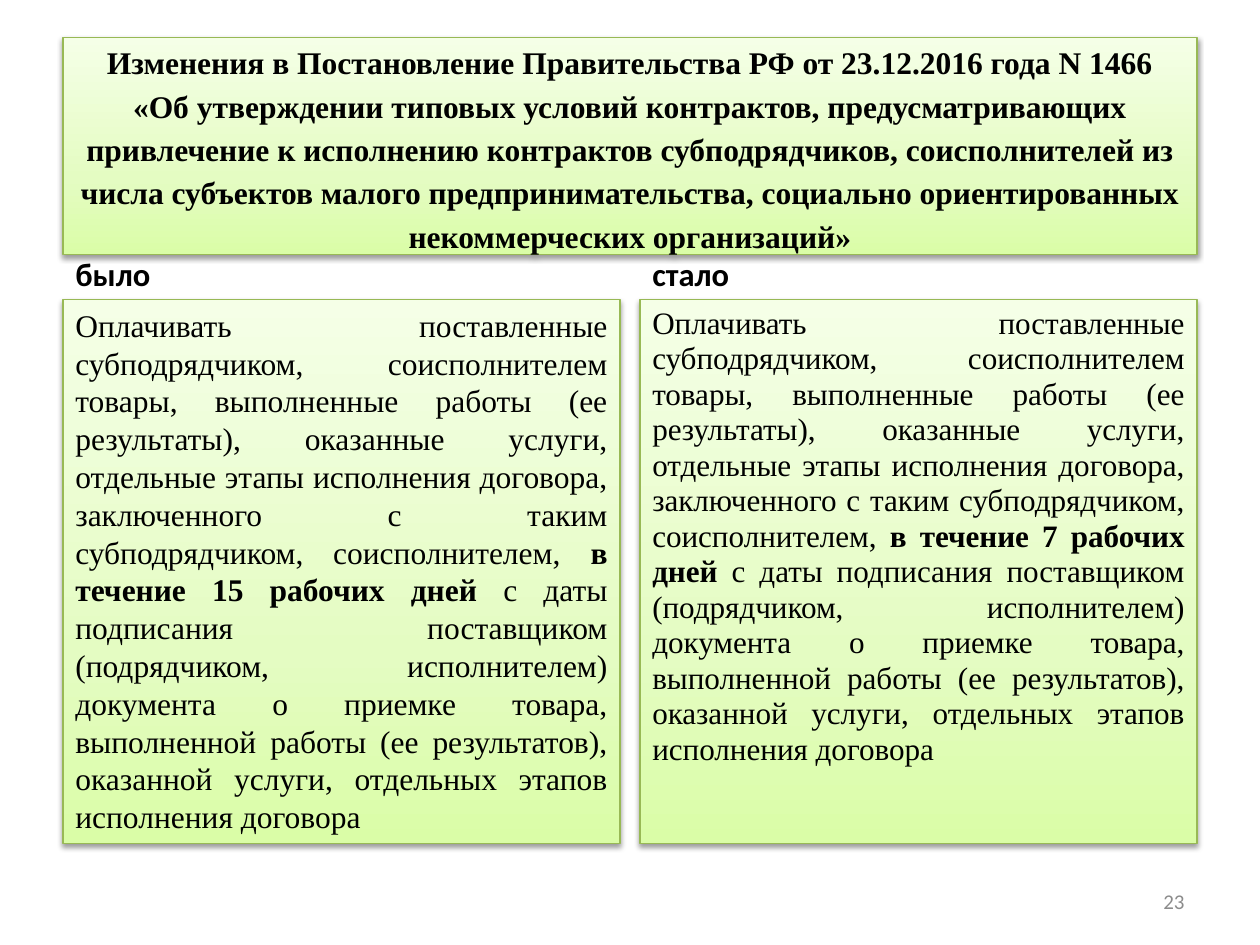
from copy import deepcopy
from dataclasses import dataclass

from lxml import etree
from pptx import Presentation
from pptx import util as u
from pptx.dml import color
from pptx.enum import shapes, text
from pptx.oxml import ns

SERIF, SANS = "Times New Roman", "Calibri"
BLACK, GREY, BORDER = "000000", "8C8C8C", "98B955"
GREENS = ((0, "DAFDA7"), (0.35, "E4FCC2"), (1, "F5FFE7"))
MARGIN, CONTENT_WIDTH, COLUMN_WIDTH = 1.27, 22.86, 11.23
LABEL_TOP, LABEL_HEIGHT = 5.13, 0.91
TITLE = (
    "Изменения в Постановление Правительства РФ от 23.12.2016 года N 1466 "
    "«Об утверждении типовых условий контрактов, предусматривающих привлечение "
    "к исполнению контрактов субподрядчиков, соисполнителей из числа субъектов "
    "малого предпринимательства, социально ориентированных некоммерческих организаций»"
)
DUTY = (
    "Оплачивать поставленные субподрядчиком, соисполнителем товары, выполненные "
    "работы (ее результаты), оказанные услуги, отдельные этапы исполнения договора, "
    "заключенного с таким субподрядчиком, соисполнителем, "
)
START = (
    " с даты подписания поставщиком (подрядчиком, исполнителем) документа о приемке "
    "товара, выполненной работы (ее результатов), оказанной услуги, отдельных этапов "
    "исполнения договора"
)


@dataclass
class Area:
    left: float
    top: float
    width: float
    height: float

    def lengths(self) -> list:
        return [u.Cm(v) for v in (self.left, self.top, self.width, self.height)]


@dataclass
class Style:
    size: float
    font: str = SERIF
    colour: str = BLACK
    align: text.PP_ALIGN = text.PP_ALIGN.LEFT
    anchor: text.MSO_ANCHOR = text.MSO_ANCHOR.TOP
    spacing: float = 1.0
    before: float = 0


@dataclass
class Version:
    label: str
    deadline: str
    size: float
    spacing: float


VERSIONS = (
    Version("было", "в течение 15 рабочих дней", 18, 1.0),
    Version("стало", "в течение 7 рабочих дней", 17.8, 0.95),
)


def rgb(value: str) -> color.RGBColor:
    return color.RGBColor.from_string(value)


def write(shape, pieces: list[tuple[str, bool]], style: Style) -> None:
    frame = shape.text_frame
    frame.word_wrap = True
    frame.vertical_anchor = style.anchor
    paragraph = frame.paragraphs[0]
    paragraph.alignment = style.align
    paragraph.line_spacing = style.spacing
    paragraph.space_before = u.Pt(style.before)
    for words, bold in pieces:
        run = paragraph.add_run()
        run.text = words
        run.font.name = style.font
        run.font.size = u.Pt(style.size)
        run.font.bold = bold
        run.font.color.rgb = rgb(style.colour)


def add_panel(slide, area: Area, pieces: list[tuple[str, bool]], style: Style) -> None:
    panel = slide.shapes.add_shape(shapes.MSO_SHAPE.RECTANGLE, *area.lengths())
    panel.line.color.rgb = rgb(BORDER)
    panel.line.width = u.Pt(0.75)
    panel.fill.gradient()
    panel.fill.gradient_angle = 90
    properties = panel._element.spPr
    stop_list = properties.find(".//" + ns.qn("a:gsLst"))
    stop_list.append(deepcopy(stop_list[-1]))
    for stop, (position, shade) in zip(panel.fill.gradient_stops, GREENS):
        stop.position = position
        stop.color.rgb = rgb(shade)
    panel.shadow.inherit = False
    effects = properties.find(ns.qn("a:effectLst"))
    shadow = etree.SubElement(
        effects, ns.qn("a:outerShdw"),
        blurRad="40000", dist="20000", dir="5400000", rotWithShape="0",
    )
    tint = etree.SubElement(shadow, ns.qn("a:srgbClr"), val=BLACK)
    etree.SubElement(tint, ns.qn("a:alpha"), val="38000")
    write(panel, pieces, style)


def add_label(slide, area: Area, words: str, bold: bool, style: Style) -> None:
    write(slide.shapes.add_textbox(*area.lengths()), [(words, bold)], style)


def main() -> None:
    deck = Presentation()
    deck.slide_width, deck.slide_height = u.Cm(25.4), u.Cm(19.05)
    slide = deck.slides.add_slide(deck.slide_layouts[6])

    heading = Style(18, align=text.PP_ALIGN.CENTER, anchor=text.MSO_ANCHOR.MIDDLE, spacing=1.15)
    add_panel(slide, Area(MARGIN, 0.76, CONTENT_WIDTH, 4.37), [(TITLE, True)], heading)

    label_style = Style(18.6, SANS, anchor=text.MSO_ANCHOR.BOTTOM, before=3.7)
    for column, version in enumerate(VERSIONS):
        left = MARGIN + column * (CONTENT_WIDTH - COLUMN_WIDTH)
        label_area = Area(left, LABEL_TOP, COLUMN_WIDTH, LABEL_HEIGHT)
        add_label(slide, label_area, version.label, True, label_style)
        clause = Style(version.size, align=text.PP_ALIGN.JUSTIFY,
                       spacing=version.spacing, before=3.6)
        add_panel(slide, Area(left, LABEL_TOP + LABEL_HEIGHT, COLUMN_WIDTH, 10.97),
                  [(DUTY, False), (version.deadline, True), (START, False)], clause)

    number_style = Style(12, SANS, GREY, text.PP_ALIGN.RIGHT, text.MSO_ANCHOR.MIDDLE)
    add_label(slide, Area(18.2, 17.66, 5.93, 1.01), "23", False, number_style)
    deck.save("out.pptx")


if __name__ == "__main__":
    main()
